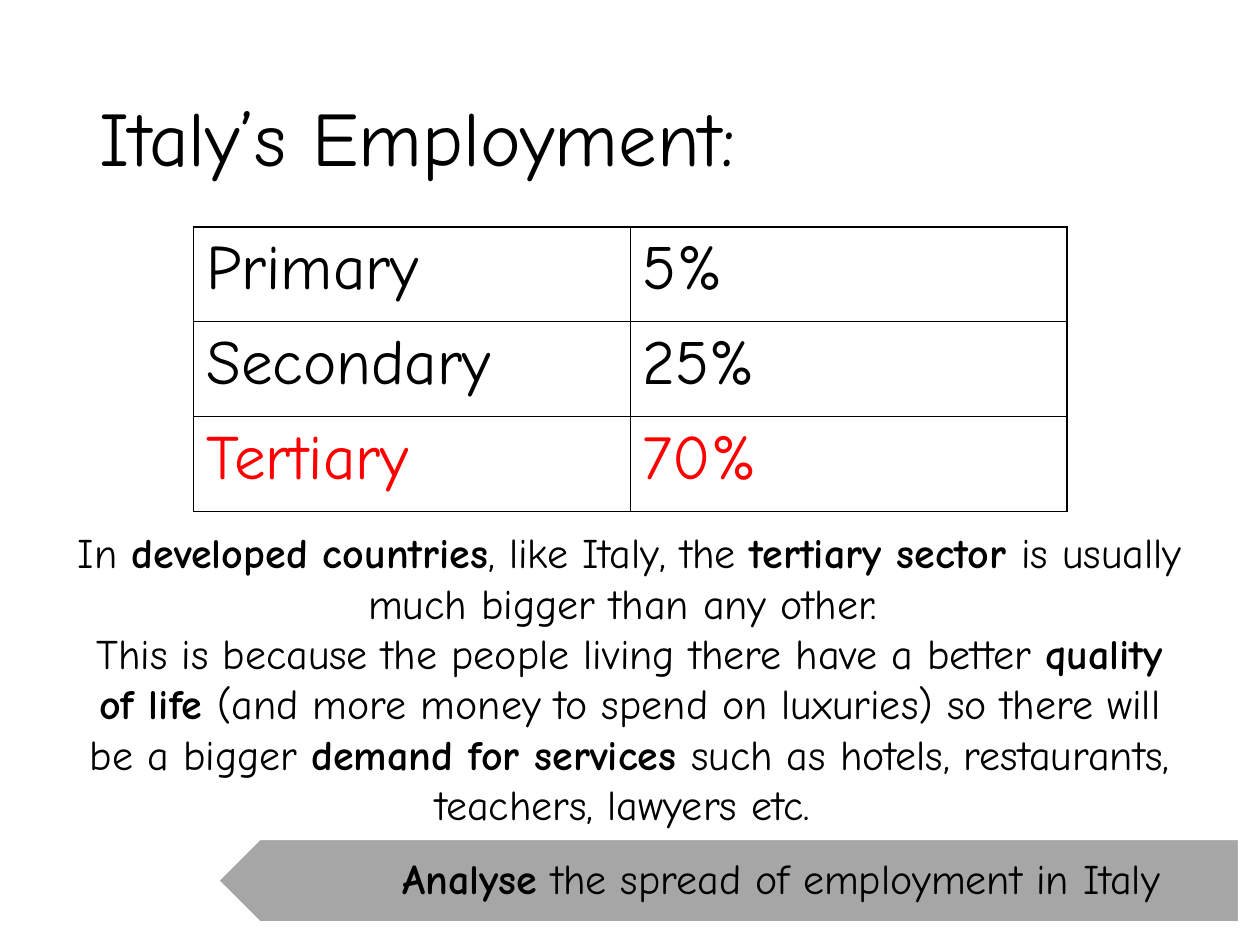
from lxml import etree
from pptx import Presentation
from pptx.dml.color import RGBColor
from pptx.enum.shapes import MSO_SHAPE
from pptx.enum.text import MSO_ANCHOR, PP_ALIGN
from pptx.oxml.ns import qn
from pptx.util import Pt

FONT = "Comic Neue"
BLACK = RGBColor(0, 0, 0)
WHITE = RGBColor(0xFF, 0xFF, 0xFF)
RED = RGBColor(0xFF, 0, 0)
GREY = RGBColor(0xA6, 0xA6, 0xA6)
LEFT, CENTER = PP_ALIGN.LEFT, PP_ALIGN.CENTER
MIDDLE = MSO_ANCHOR.MIDDLE
PENTAGON = MSO_SHAPE.PENTAGON

SECTORS = [("Primary", "5%", BLACK), ("Secondary", "25%", BLACK), ("Tertiary", "70%", RED)]

# Paragraphs as (text, bold) runs
EXPLANATION = [
    [("In ", False), ("developed countries", True), (", like Italy, the ", False),
     ("tertiary sector ", True), ("is usually much bigger than any other. ", False)],
    [("This is because the people living there have a better ", False),
     ("quality of life ", True),
     ("(and more money to spend on luxuries) so there will be a bigger ", False),
     ("demand for services ", True),
     ("such as hotels, restaurants, teachers, lawyers etc. ", False)],
]
OBJECTIVE = [("Analyse", True), (" the spread of employment in Italy ", False)]


def add_run(p, text, size, color=BLACK, bold=False):
    r = p.add_run()
    r.text = text
    r.font.name = FONT
    r.font.size = Pt(size)
    r.font.color.rgb = color
    r.font.bold = bold


def set_borders(cell, color, width):
    tc_pr = cell._tc.get_or_add_tcPr()
    for i, side in enumerate(("a:lnL", "a:lnR", "a:lnT", "a:lnB")):
        ln = etree.Element(qn(side), w=str(Pt(width)))
        fill = etree.SubElement(ln, qn("a:solidFill"))
        etree.SubElement(fill, qn("a:srgbClr"), val=str(color))
        tc_pr.insert(i, ln)  # borders come before the fill


def place_title(slide, x, y, w, h):
    title = slide.shapes.title
    title.left, title.top, title.width, title.height = Pt(x), Pt(y), Pt(w), Pt(h)
    title.text_frame.vertical_anchor = MIDDLE
    p = title.text_frame.paragraphs[0]
    p.alignment = LEFT
    p.line_spacing = 0.9
    add_run(p, "Italy’s Employment:", 44)


def add_sector_table(slide, x, y, w, h):
    table = slide.shapes.add_table(len(SECTORS), 2, Pt(x), Pt(y), Pt(w), Pt(h)).table
    table.first_row = table.horz_banding = False
    for row, (sector, share, color) in enumerate(SECTORS):
        for col, text in enumerate((sector, share)):
            cell = table.cell(row, col)
            cell.fill.background()
            set_borders(cell, BLACK, 1)
            add_run(cell.text_frame.paragraphs[0], text, 36, color)


def add_text(slide, x, y, w, h, paragraphs):
    tf = slide.shapes.add_textbox(Pt(x), Pt(y), Pt(w), Pt(h)).text_frame
    tf.word_wrap = True
    for i, runs in enumerate(paragraphs):
        p = tf.add_paragraph() if i else tf.paragraphs[0]
        p.alignment = CENTER
        for text, bold in runs:
            add_run(p, text, 24, bold=bold)
    return tf


def add_objective(slide, x, y, w, h):
    # Arrow banner pointing left
    sp = slide.shapes.add_shape(PENTAGON, Pt(x), Pt(y), Pt(w), Pt(h))
    sp.rotation = 180
    sp.shadow.inherit = False
    sp.fill.solid()
    sp.fill.fore_color.rgb = GREY
    sp.line.color.rgb = WHITE
    sp.line.width = Pt(1)
    # Label, clear of the arrow tip
    tip = 35
    tf = add_text(slide, x + tip, y, w - tip, h, [OBJECTIVE])
    tf.vertical_anchor = MIDDLE
    tf.margin_left, tf.margin_right = Pt(46.8), Pt(13.7)
    tf.margin_top = tf.margin_bottom = Pt(7.2)
    tf.paragraphs[0].line_spacing = 0.9


def main():
    prs = Presentation()
    prs.slide_width, prs.slide_height = Pt(720), Pt(540)
    slide = prs.slides.add_slide(prs.slide_layouts[5])
    place_title(slide, 49.5, 28.75, 621, 104.4)
    add_sector_table(slide, 110.7, 129.6, 499, 162.6)
    add_text(slide, 34.75, 297.4, 650, 181.4, EXPLANATION)
    add_objective(slide, 124.8, 479.6, 583, 47.2)
    prs.save("out.pptx")


if __name__ == "__main__":
    main()
